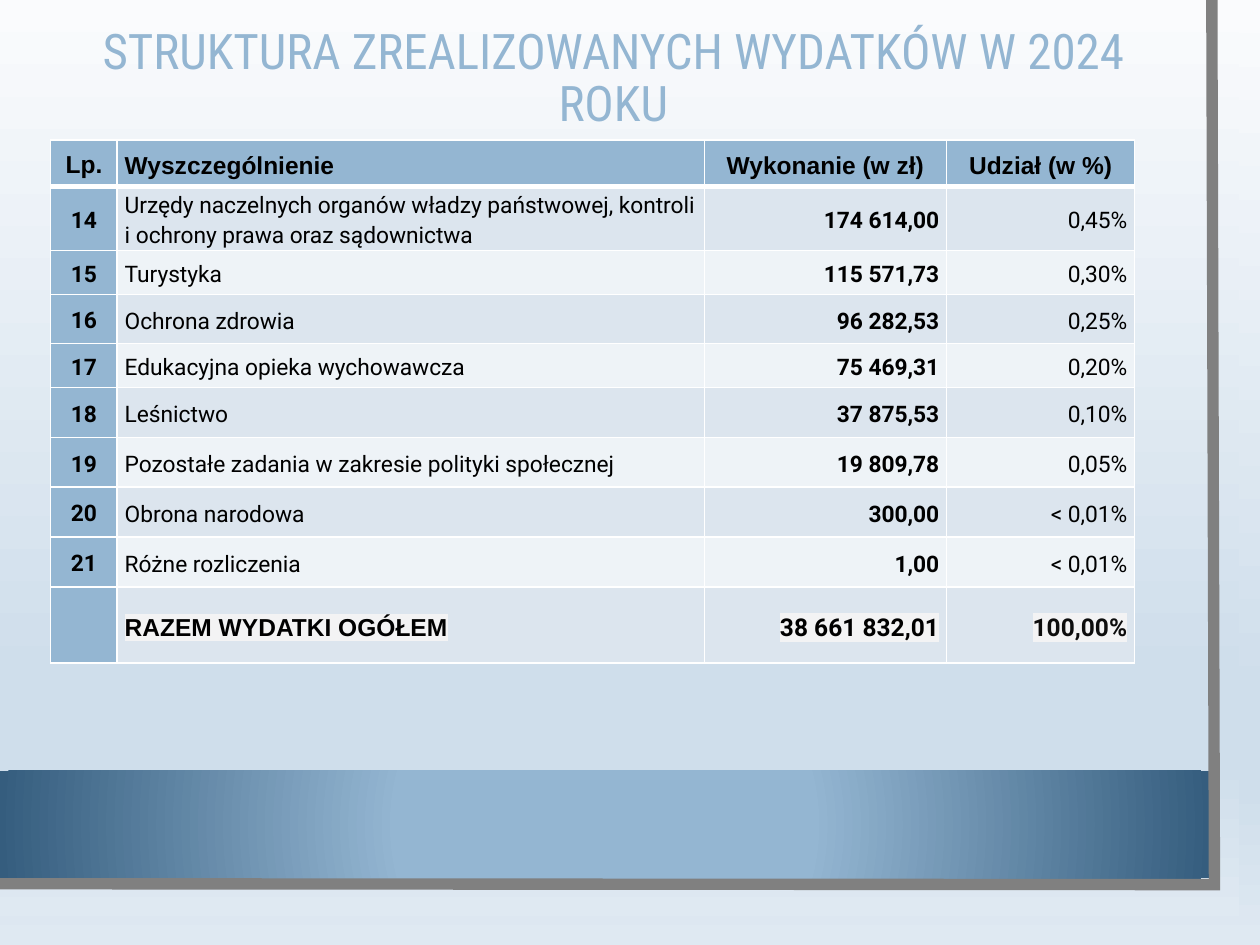
"""Build the slide with the structure of expenditure in 2024."""
from lxml.etree import SubElement
from pptx import Presentation
from pptx.dml.color import RGBColor
from pptx.enum.shapes import MSO_SHAPE
from pptx.enum.text import MSO_ANCHOR, PP_ALIGN
from pptx.oxml import parse_xml
from pptx.oxml.ns import nsdecls, qn
from pptx.util import Pt

BLUE = RGBColor(0x94, 0xB6, 0xD2)
NAVY = RGBColor(0x35, 0x5D, 0x7E)
GREY = RGBColor(0x80, 0x80, 0x80)
BLACK = RGBColor(0, 0, 0)
NEAR_BLACK = RGBColor(0x0D, 0x0D, 0x0D)
WHITE = RGBColor(255, 255, 255)
HIGHLIGHT = RGBColor(0xF3, 0xF3, 0xF4)
BANDS = [RGBColor(0xDC, 0xE5, 0xEE), RGBColor(0xEE, 0xF3, 0xF7)]
MIST = RGBColor(0xCF, 0xDE, 0xEB)
SKY = [(0, RGBColor(0xFA, 0xFB, 0xFD)), (74, MIST), (83, MIST), (100, RGBColor(0xDF, 0xE9, 0xF2))]
GLOW = [(34, BLUE), (100, NAVY)]
DOWNWARD = '<a:lin ang="5400000" scaled="0"/>'
CIRCLE = '<a:path path="circle"><a:fillToRect l="50000" t="50000" r="50000" b="50000"/></a:path>'

TITLE = "STRUKTURA ZREALIZOWANYCH WYDATKÓW W 2024 ROKU"
ROWS = [
    ("Lp.", "Wyszczególnienie", "Wykonanie (w\u00a0zł)", "Udział (w\u00a0%)"),
    ("14", "Urzędy naczelnych organów władzy państwowej, kontroli i ochrony prawa oraz sądownictwa",
     "174\u00a0614,00", "0,45%"),
    ("15", "Turystyka", "115\u00a0571,73", "0,30%"),
    ("16", "Ochrona zdrowia", "96\u00a0282,53", "0,25%"),
    ("17", "Edukacyjna opieka wychowawcza", "75\u00a0469,31", "0,20%"),
    ("18", "Leśnictwo", "37\u00a0875,53", "0,10%"),
    ("19", "Pozostałe zadania w zakresie polityki społecznej", "19\u00a0809,78", "0,05%"),
    ("20", "Obrona narodowa", "300,00", "< 0,01%"),
    ("21", "Różne rozliczenia", "1,00", "< 0,01%"),
    ("", "RAZEM WYDATKI OGÓŁEM", "38\u00a0661\u00a0832,01", "100,00%"),
]
COLUMN_WIDTHS = [38, 335.5, 138.5, 107.5]
ROW_HEIGHTS = [24.5, 36, 24, 28, 24, 28.5, 28.5, 28.5, 28.5, 43.5]
HEADER_ALIGN = [PP_ALIGN.CENTER, PP_ALIGN.LEFT, PP_ALIGN.CENTER, PP_ALIGN.CENTER]
BODY_ALIGN = [PP_ALIGN.CENTER, PP_ALIGN.LEFT, PP_ALIGN.RIGHT, PP_ALIGN.RIGHT]


def set_gradient(fill, element, stops, direction):
    fill.solid()
    solid = element.xpath(".//a:solidFill")[0]
    stop_xml = "".join(
        f'<a:gs pos="{position * 1000}"><a:srgbClr val="{color}"/></a:gs>' for position, color in stops)
    gradient = parse_xml(
        f'<a:gradFill {nsdecls("a")} rotWithShape="1"><a:gsLst>{stop_xml}</a:gsLst>{direction}</a:gradFill>')
    solid.getparent().replace(solid, gradient)


def add_panel(page, left, top, width, height, stops, direction):
    panel = page.shapes.add_shape(MSO_SHAPE.RECTANGLE, Pt(left), Pt(top), Pt(width), Pt(height))
    panel.shadow.inherit = False
    panel.line.fill.background()
    set_gradient(panel.fill, panel._element.spPr, stops, direction)


def add_frame(page):
    builder = page.shapes.build_freeform(Pt(692.5), Pt(0))
    builder.add_line_segments([(Pt(694), Pt(505.5)), (Pt(-1.5), Pt(505))], close=False)
    frame = builder.convert_to_shape()
    frame.shadow.inherit = False
    frame.fill.background()
    frame.line.color.rgb = GREY
    frame.line.width = Pt(6.5)
    SubElement(frame.line._ln, qn("a:miter"), lim="800000")


def add_title(page):
    box = page.shapes.add_textbox(Pt(26.5), Pt(19.5), Pt(648), Pt(52))
    frame = box.text_frame
    frame.word_wrap = True
    frame.vertical_anchor = MSO_ANCHOR.MIDDLE
    frame.text = TITLE
    para = frame.paragraphs[0]
    para.alignment = PP_ALIGN.CENTER
    para.line_spacing = 0.9
    style_span(para.runs[0], "Roboto Condensed", 28, BLUE, False)


def style_span(span, name, size, color, bold):
    span.font.name = name
    span.font.size = Pt(size)
    span.font.color.rgb = color
    span.font.bold = bold


def set_borders(cell, bottom_width):
    properties = cell._tc.get_or_add_tcPr()
    for index, side in enumerate("LRTB"):
        width = Pt(bottom_width if side == "B" else 1)
        properties.insert(index, parse_xml(
            f'<a:ln{side} {nsdecls("a")} w="{width}"><a:solidFill><a:srgbClr val="{WHITE}"/>'
            f'</a:solidFill></a:ln{side}>'))


def fill_cell(cell, text, row, column):
    header, total = row == 0, row == len(ROWS) - 1
    cell.fill.solid()
    cell.fill.fore_color.rgb = BLUE if header or column == 0 else BANDS[(row - 1) % 2]
    set_borders(cell, 3 if header else 1)
    cell.vertical_anchor = MSO_ANCHOR.MIDDLE
    cell.margin_left = cell.margin_right = Pt(4.3)
    cell.margin_top = Pt(3.6 if column == 0 else 0.7)
    cell.margin_bottom = Pt(3.6 if column == 0 else 0)
    cell.text_frame.text = text
    para = cell.text_frame.paragraphs[0]
    para.alignment = (HEADER_ALIGN if header else BODY_ALIGN)[column]
    para.line_spacing = 1.15
    para.space_after = Pt(8)
    for span in para.runs:
        style_span(span, "Arial" if header or (total and column == 1) else "Roboto",
                   14 if header or total else 13,
                   NEAR_BLACK if total and column == 3 else BLACK,
                   header or total or column in (0, 2))
        if total:
            span.font._element.find(qn("a:solidFill")).addnext(parse_xml(
                f'<a:highlight {nsdecls("a")}><a:srgbClr val="{HIGHLIGHT}"/></a:highlight>'))


def add_expenditure_table(page):
    table = page.shapes.add_table(
        len(ROWS), len(COLUMN_WIDTHS), Pt(29), Pt(80),
        Pt(sum(COLUMN_WIDTHS)), Pt(sum(ROW_HEIGHTS))).table
    for column, width in zip(table.columns, COLUMN_WIDTHS):
        column.width = Pt(width)
    for row, (height, texts) in enumerate(zip(ROW_HEIGHTS, ROWS)):
        table.rows[row].height = Pt(height)
        for column, text in enumerate(texts):
            fill_cell(table.cell(row, column), text, row, column)


def main():
    deck = Presentation()
    deck.slide_width, deck.slide_height = Pt(720), Pt(540)
    page = deck.slides.add_slide(deck.slide_layouts[6])
    set_gradient(page.background.fill, page._element, SKY, DOWNWARD)
    add_panel(page, 0, 0, 708, 523.5, SKY, DOWNWARD)
    add_panel(page, 0, 440.5, 691, 61.5, GLOW, CIRCLE)
    add_frame(page)
    add_title(page)
    add_expenditure_table(page)
    deck.save("out.pptx")


if __name__ == "__main__":
    main()
